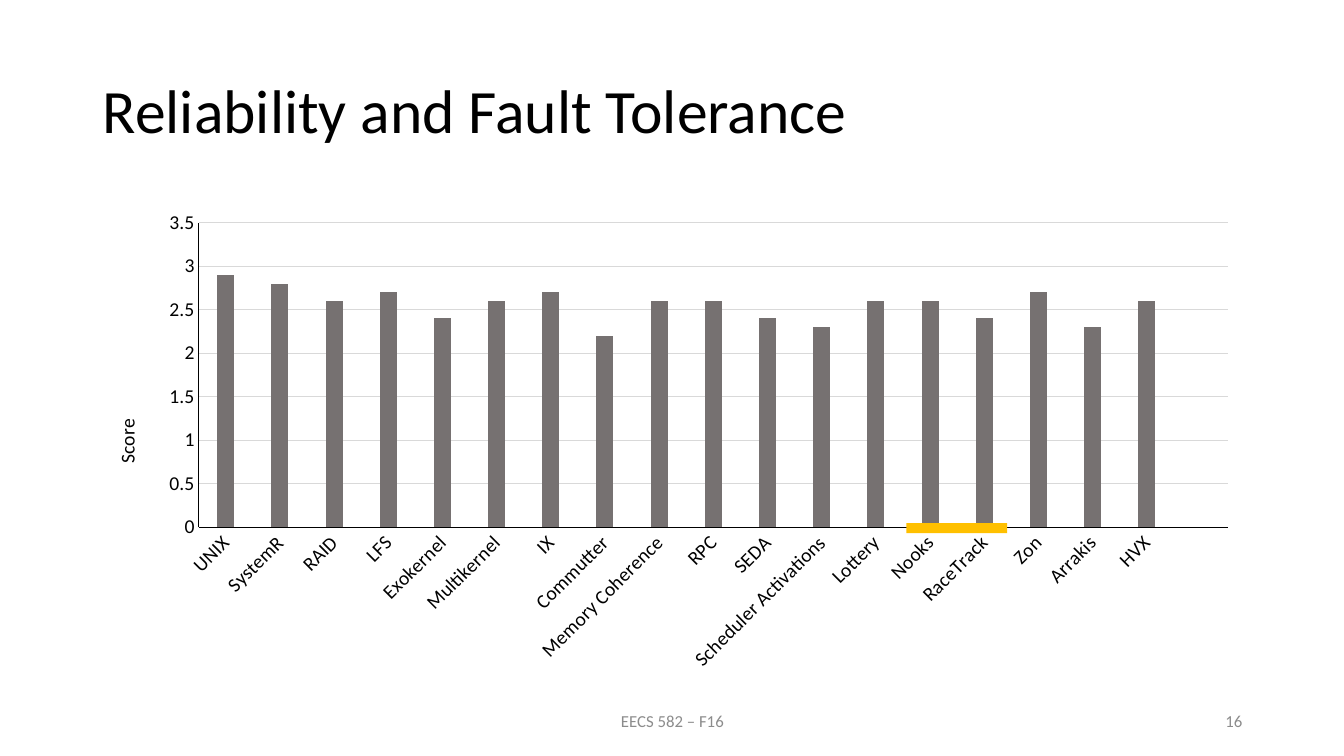
from lxml import etree
from pptx import Presentation
from pptx.chart.data import CategoryChartData
from pptx.dml.color import RGBColor
from pptx.enum.chart import XL_CHART_TYPE, XL_TICK_MARK
from pptx.enum.shapes import MSO_SHAPE
from pptx.enum.text import MSO_ANCHOR, PP_ALIGN
from pptx.oxml.ns import qn
from pptx.util import Inches, Pt

BLACK = RGBColor(0x00, 0x00, 0x00)
FOOTER_GRAY = RGBColor(0x8C, 0x8C, 0x8C)
GRID_GRAY = RGBColor(0xD9, 0xD9, 0xD9)
BAR_GRAY = RGBColor(0x76, 0x71, 0x71)
HIGHLIGHT = RGBColor(0xFF, 0xC0, 0x00)

COLUMN = XL_CHART_TYPE.COLUMN_CLUSTERED
NO_TICK = XL_TICK_MARK.NONE
RECTANGLE = MSO_SHAPE.RECTANGLE
MIDDLE = MSO_ANCHOR.MIDDLE
LEFT, CENTER, RIGHT = PP_ALIGN.LEFT, PP_ALIGN.CENTER, PP_ALIGN.RIGHT

FONT = "Calibri"
CHART_WIDTH, CHART_HEIGHT = Inches(11.5), Inches(4.76)
SCORES = {
    "UNIX": 2.9, "SystemR": 2.8, "RAID": 2.6, "LFS": 2.7,
    "Exokernel": 2.4, "Multikernel": 2.6, "IX": 2.7, "Commutter": 2.2,
    "Memory Coherence": 2.6, "RPC": 2.6, "SEDA": 2.4,
    "Scheduler Activations": 2.3, "Lottery": 2.6, "Nooks": 2.6,
    "RaceTrack": 2.4, "Zon": 2.7, "Arrakis": 2.3, "HVX": 2.6,
}


def set_font(font, size, color):
    font.name = FONT
    font.size = Pt(size)
    font.bold = False
    font.color.rgb = color


def set_line(line, color):
    line.color.rgb = color
    line.width = Pt(0.75)


def set_layout(parent, index, left, top, size=None):
    """Place a chart part, measured from the chart's top left corner."""
    for old in parent.findall(qn("c:layout")):
        parent.remove(old)
    values = {"xMode": "edge", "yMode": "edge",
              "x": left / CHART_WIDTH, "y": top / CHART_HEIGHT}
    if size:
        width, height = size
        values = {"layoutTarget": "inner", **values,
                  "w": width / CHART_WIDTH, "h": height / CHART_HEIGHT}
    layout = etree.Element(qn("c:layout"))
    parent.insert(index, layout)
    manual = etree.SubElement(layout, qn("c:manualLayout"))
    for name, value in values.items():
        etree.SubElement(manual, qn(f"c:{name}")).set("val", str(value))


def add_title(slide, text):
    title = slide.shapes.title
    title.left, title.top = Inches(0.92), Inches(0.4)
    title.width, title.height = Inches(11.5), Inches(1.45)
    tf = title.text_frame
    tf.text = text
    tf.vertical_anchor = MIDDLE
    p = tf.paragraphs[0]
    p.alignment = LEFT
    p.line_spacing = 0.9
    set_font(p.font, 44, BLACK)


def add_footer(slide, text, left, width, alignment):
    box = slide.shapes.add_textbox(
        Inches(left), Inches(6.95), Inches(width), Inches(0.4))
    tf = box.text_frame
    tf.word_wrap = True
    tf.vertical_anchor = MIDDLE
    p = tf.paragraphs[0]
    p.text = text
    p.alignment = alignment
    set_font(p.font, 12, FOOTER_GRAY)


def style_axis(axis):
    axis.major_tick_mark = axis.minor_tick_mark = NO_TICK
    set_font(axis.tick_labels.font, 14, BLACK)
    set_line(axis.format.line, BLACK)


def add_axis_title(axis, text):
    title = axis.axis_title
    tf = title.text_frame
    tf.text = text
    set_font(tf.paragraphs[0].font, 14, BLACK)
    body = tf._txBody.find(qn("a:bodyPr"))
    body.set("rot", "-5400000")
    body.set("vert", "horz")
    set_layout(title._element, 1, Inches(0.17), Inches(2.12))


def add_score_chart(slide):
    data = CategoryChartData()
    data.categories = list(SCORES)
    # The extra empty value leaves a free slot at the right end.
    data.add_series("Series 1", [*SCORES.values(), None])
    chart = slide.shapes.add_chart(
        COLUMN, Inches(0.92), Inches(2), CHART_WIDTH, CHART_HEIGHT, data).chart
    chart.has_title = False
    chart.has_legend = False
    set_font(chart.font, 14, BLACK)

    plot = chart.plots[0]
    plot.gap_width = 219
    plot.overlap = -27
    plot.vary_by_categories = False
    fill = plot.series[0].format.fill
    fill.solid()
    fill.fore_color.rgb = BAR_GRAY

    names, scores = chart.category_axis, chart.value_axis
    style_axis(names)
    names._element.txPr.find(qn("a:bodyPr")).set("rot", "-2700000")
    style_axis(scores)
    scores.minimum_scale, scores.maximum_scale = 0, 3.5
    scores.major_unit = 0.5
    scores.has_major_gridlines = True
    set_line(scores.major_gridlines.format.line, GRID_GRAY)
    add_axis_title(scores, "Score")

    plot_area = chart._chartSpace.chart.plotArea
    set_layout(plot_area, 0, Inches(1.05), Inches(0.21),
               size=(Inches(10.21), Inches(3.02)))


def add_highlight(slide, left, top, width, height):
    bar = slide.shapes.add_shape(
        RECTANGLE, Inches(left), Inches(top), Inches(width), Inches(height))
    bar.shadow.inherit = False
    bar.fill.solid()
    bar.fill.fore_color.rgb = HIGHLIGHT
    bar.line.fill.background()


def main():
    prs = Presentation()
    prs.slide_width, prs.slide_height = Inches(13.33), Inches(7.5)
    slide = prs.slides.add_slide(prs.slide_layouts.get_by_name("Title Only"))
    add_title(slide, "Reliability and Fault Tolerance")
    add_footer(slide, "EECS 582 – F16", 4.42, 4.5, CENTER)
    add_footer(slide, "16", 9.42, 3, RIGHT)
    add_score_chart(slide)
    add_highlight(slide, 8.99, 5.19, 1, 0.1)
    prs.save("out.pptx")


if __name__ == "__main__":
    main()
